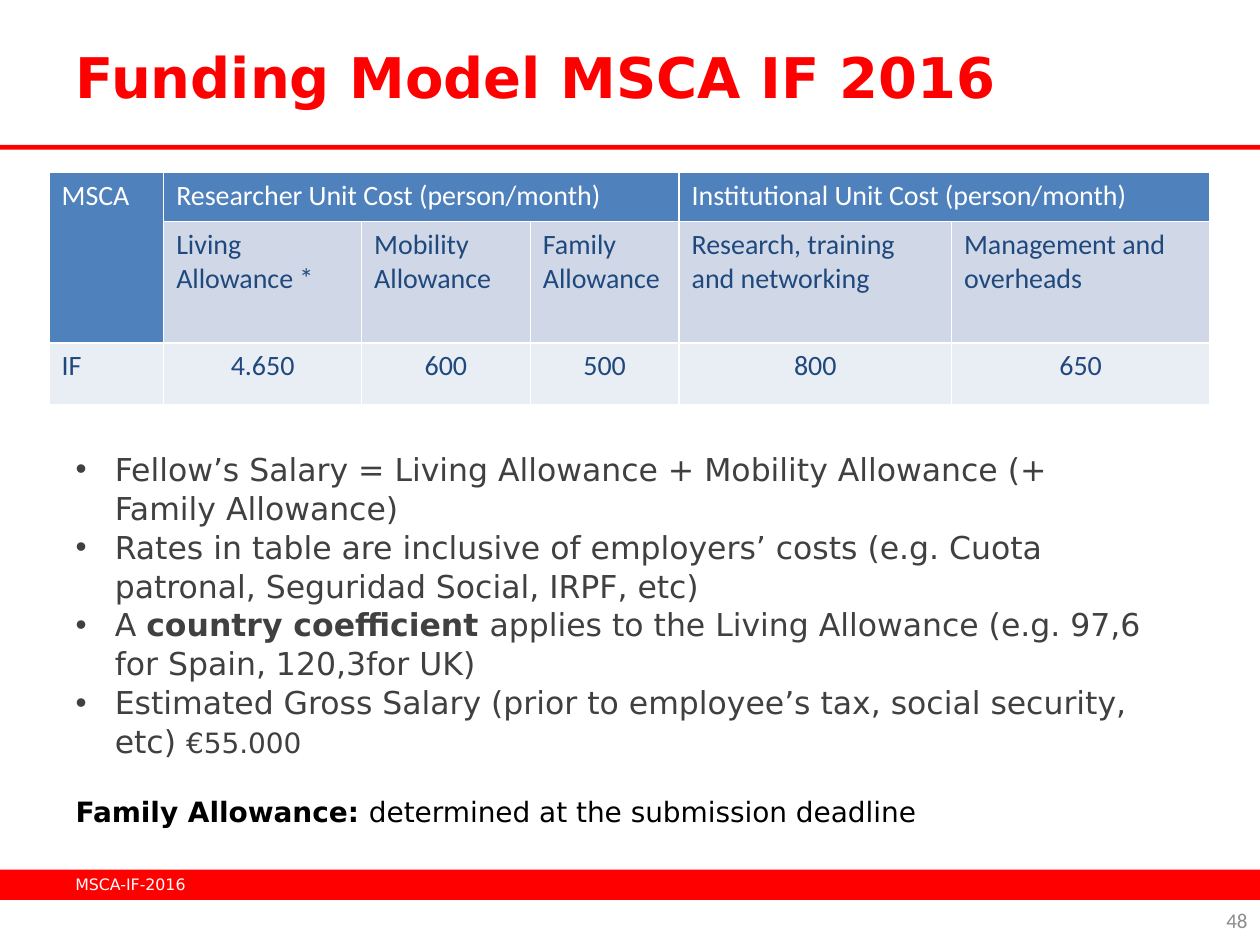
from lxml import etree
from pptx import Presentation
from pptx.dml.color import RGBColor
from pptx.enum.shapes import MSO_SHAPE
from pptx.enum.text import MSO_ANCHOR, MSO_AUTO_SIZE, PP_ALIGN
from pptx.oxml.ns import qn
from pptx.util import Cm, Pt

RECT = MSO_SHAPE.RECTANGLE
MID, TOP = MSO_ANCHOR.MIDDLE, MSO_ANCHOR.TOP
LEFT, RIGHT, CENTER = PP_ALIGN.LEFT, PP_ALIGN.RIGHT, PP_ALIGN.CENTER
FIXED = MSO_AUTO_SIZE.NONE
SANS, CALIBRI = "DejaVu Sans", "Calibri"
RED, WHITE, BLACK, GREY, DARK = "FF0000", "FFFFFF", "000000", "8C8C8C", "404040"
BLUE, NAVY, PALE, FAINT = "4F81BD", "1F497D", "D0D8E8", "E9EDF4"


def rgb(code):
    return RGBColor.from_string(code)


class Deck:
    def __init__(self):
        self.prs = Presentation()
        self.prs.slide_width, self.prs.slide_height = Cm(25.4), Cm(19.05)
        self.slide = self.prs.slides.add_slide(self.prs.slide_layouts[1])
        self.shapes = self.slide.shapes

    def style(self, font, size, color, face=SANS, bold=False):
        font.name, font.size, font.bold = face, Pt(size), bold
        font.color.rgb = rgb(color)

    def place(self, shape, box, anchor):
        shape.left, shape.top, shape.width, shape.height = map(Cm, box)
        frame = shape.text_frame
        frame.word_wrap, frame.auto_size = True, FIXED
        frame.vertical_anchor = anchor
        return frame

    def bar(self, top, height):
        bar = self.shapes.add_shape(RECT, 0, Cm(top), Cm(25.4), Cm(height))
        bar.shadow.inherit = False
        bar.fill.solid()
        bar.fill.fore_color.rgb = rgb(RED)
        bar.line.fill.background()

    def title(self, text, box):
        frame = self.place(self.shapes.title, box, MID)
        frame.text = text
        para = frame.paragraphs[0]
        para.alignment = LEFT
        self.style(para.runs[0].font, 32, RED, bold=True)

    def label(self, text, box, size, color, face, align):
        frame = self.place(self.shapes.add_textbox(0, 0, 0, 0), box, MID)
        frame.text = text
        para = frame.paragraphs[0]
        para.alignment = align
        self.style(para.runs[0].font, size, color, face)

    def bullet(self, para, mark):
        props = para._p.get_or_add_pPr()
        indent = Cm(0.79) if mark else 0
        props.set("marL", str(indent))
        props.set("indent", str(-indent))
        if mark:
            etree.SubElement(props, qn("a:buFont"), typeface="Arial")
            etree.SubElement(props, qn("a:buChar"), char=mark)
        else:
            etree.SubElement(props, qn("a:buNone"))

    def body(self, items, box):
        frame = self.place(self.slide.placeholders[1], box, TOP)
        for i, (mark, gap, color, parts) in enumerate(items):
            para = frame.paragraphs[0] if i == 0 else frame.add_paragraph()
            self.bullet(para, mark)
            para.space_before, para.space_after = Pt(gap), Pt(0)
            para.line_spacing = 1.03
            para.alignment = LEFT
            for text, size, bold in parts:
                run = para.add_run()
                run.text = text
                self.style(run.font, size, color, bold=bold)

    def border(self, cell):
        props = cell._tc.get_or_add_tcPr()
        for side in ("lnL", "lnR", "lnT", "lnB"):
            line = etree.SubElement(props, qn("a:" + side), w=str(Pt(1)))
            fill = etree.SubElement(line, qn("a:solidFill"))
            etree.SubElement(fill, qn("a:srgbClr"), val=WHITE)

    def cell(self, cell, text, fill, color, align):
        self.border(cell)
        cell.fill.solid()
        cell.fill.fore_color.rgb = rgb(fill)
        if text:
            cell.text = text
            para = cell.text_frame.paragraphs[0]
            para.alignment = align
            self.style(para.runs[0].font, 16, color, CALIBRI)

    def table(self, rows, looks, spans, left, top, widths, heights):
        table = self.shapes.add_table(
            len(rows), len(widths), Cm(left), Cm(top),
            Cm(sum(widths)), Cm(sum(heights))).table
        table.first_row = table.horz_banding = False
        for col, width in zip(table.columns, widths):
            col.width = Cm(width)
        for row, height in zip(table.rows, heights):
            row.height = Cm(height)
        for r, (row, (fill, color, align)) in enumerate(zip(rows, looks)):
            for c, text in enumerate(row):
                head = r < 2 and c == 0
                self.cell(table.cell(r, c), text, BLUE if head else fill,
                          color, align if c else LEFT)
        for start, end in spans:
            table.cell(*start).merge(table.cell(*end))


ROWS = [
    ["MSCA", "Researcher Unit Cost (person/month)", "", "",
     "Institutional Unit Cost (person/month)", ""],
    ["", "Living Allowance *", "Mobility Allowance", "Family Allowance",
     "Research, training and networking", "Management and overheads"],
    ["IF", "4.650", "600", "500", "800", "650"],
]
LOOKS = [(BLUE, WHITE, LEFT), (PALE, NAVY, LEFT), (FAINT, NAVY, CENTER)]
SPANS = [((0, 0), (1, 0)), ((0, 1), (0, 3)), ((0, 4), (0, 5))]
ITEMS = [
    ("•", 0, DARK, [("Fellow’s Salary = Living Allowance + Mobility Allowance "
                     "(+ Family Allowance)", 18, False)]),
    ("•", 0, DARK, [("Rates in table are inclusive of employers’ costs (e.g. "
                     "Cuota patronal, Seguridad Social, IRPF, etc)", 18, False)]),
    ("•", 0, DARK, [("A ", 18, False), ("country coefficient ", 18, True),
                    ("applies to the Living Allowance (e.g. 97,6 for Spain, "
                     "120,3for UK)", 18, False)]),
    ("•", 0, DARK, [("Estimated Gross Salary (prior to employee’s tax, social "
                     "security, etc) ", 18, False), ("€55.000", 16, False)]),
    ("", 19, BLACK, [("Family Allowance: ", 16, True),
                     ("determined at the submission deadline", 16, False)]),
]


def main():
    deck = Deck()
    deck.bar(17.53, 0.61)
    deck.bar(2.92, 0.1)
    deck.title("Funding Model MSCA IF 2016", (1.27, 0.33, 22.86, 2.39))
    deck.table(ROWS, LOOKS, SPANS, 0.99, 3.48,
               [2.31, 3.99, 3.4, 3, 5.49, 5.21], [0.99, 2.44, 1.24])
    deck.body(ITEMS, (1.27, 8.92, 22.23, 8.46))
    deck.label("48", (19.48, 18.03, 5.92, 1.02), 12, GREY, CALIBRI, RIGHT)
    deck.label("MSCA-IF-2016", (1.27, 17.32, 5.92, 1.02), 9, WHITE, SANS, LEFT)
    deck.prs.save("out.pptx")


if __name__ == "__main__":
    main()
